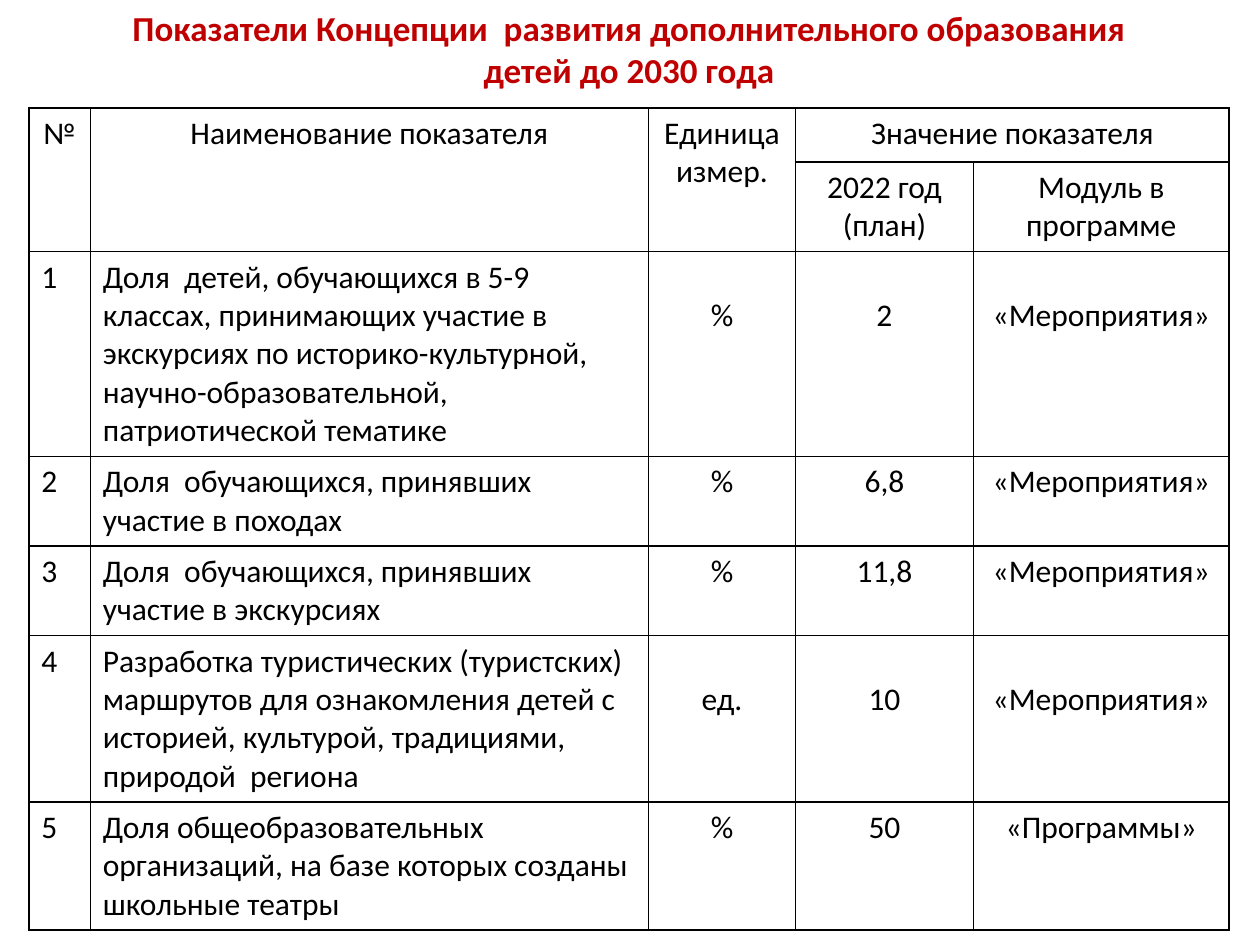
"""Build the slide with the table of education indicators."""
from typing import NamedTuple

from lxml import etree
from pptx import Presentation
from pptx import util as u
from pptx.dml import color
from pptx.enum import text
from pptx.oxml import ns

FONT = "Calibri"
BLACK, WHITE, RED = "000000", "FFFFFF", "C00000"
LEFT, WIDTH = u.Cm(0.58), u.Cm(24.2)
COLUMN_WIDTHS = (1.24, 11.25, 2.97, 3.58, 5.16)
ROW_HEIGHTS = (1.09, 1.65, 3.78, 1.65, 1.78, 3.33, 2.41)
HEADER_ROWS = 2
LOWERED_MARGIN = u.Cm(0.9)
TITLE = ("Показатели Концепции  развития дополнительного образования", "детей до 2030 года")


class Header(NamedTuple):
    row: int
    column: int
    label: str
    last_row: int
    last_column: int


class Indicator(NamedTuple):
    name: str
    unit: str
    value: str
    module: str
    lowered: bool = False


HEADERS = (
    Header(0, 0, "№", 1, 0),
    Header(0, 1, "Наименование показателя", 1, 1),
    Header(0, 2, "Единица измер.", 1, 2),
    Header(0, 3, "Значение показателя", 0, 4),
    Header(1, 3, "2022 год (план)", 1, 3),
    Header(1, 4, "Модуль в программе", 1, 4),
)

INDICATORS = (
    Indicator("Доля  детей, обучающихся в 5-9 классах, принимающих участие в экскурсиях "
              "по историко-культурной, научно-образовательной,  патриотической тематике",
              "%", "2", "«Мероприятия»", lowered=True),
    Indicator("Доля  обучающихся, принявших участие в походах", "%", "6,8", "«Мероприятия»"),
    Indicator("Доля  обучающихся, принявших участие в экскурсиях", "%", "11,8", "«Мероприятия»"),
    Indicator("Разработка туристических (туристских) маршрутов для ознакомления детей "
              "с историей, культурой, традициями, природой  региона",
              "ед.", "10", "«Мероприятия»", lowered=True),
    Indicator("Доля общеобразовательных организаций, на базе которых созданы школьные театры",
              "%", "50", "«Программы»"),
)


def rgb(value: str) -> color.RGBColor:
    return color.RGBColor.from_string(value)


def write(para, label: str, size: int, ink: str, centred: bool = True, bold: bool = False) -> None:
    para.text = label
    para.alignment = text.PP_ALIGN.CENTER if centred else text.PP_ALIGN.LEFT
    para.font.name = FONT
    para.font.size = u.Pt(size)
    para.font.bold = bold
    para.font.color.rgb = rgb(ink)


def style_cell(cell) -> None:
    properties = cell._tc.get_or_add_tcPr()
    for side in ("lnL", "lnR", "lnT", "lnB"):
        line = etree.SubElement(properties, ns.qn(f"a:{side}"), w=str(u.Pt(1)))
        fill = etree.SubElement(line, ns.qn("a:solidFill"))
        etree.SubElement(fill, ns.qn("a:srgbClr"), val=BLACK)
    cell.fill.solid()
    cell.fill.fore_color.rgb = rgb(WHITE)


def add_title(page) -> None:
    box = page.shapes.add_textbox(LEFT, u.Cm(0), WIDTH, u.Cm(1.96))
    frame = box.text_frame
    frame.word_wrap = True
    for index, label in enumerate(TITLE):
        para = frame.add_paragraph() if index else frame.paragraphs[0]
        write(para, label, 20, RED, bold=True)


def add_indicator_table(page) -> None:
    frame = page.shapes.add_table(len(ROW_HEIGHTS), len(COLUMN_WIDTHS),
                                  LEFT, u.Cm(2.18), WIDTH, u.Cm(sum(ROW_HEIGHTS)))
    table = frame.table
    table.first_row = table.horz_banding = False
    for column, width in zip(table.columns, COLUMN_WIDTHS):
        column.width = u.Cm(width)
    for row, height in zip(table.rows, ROW_HEIGHTS):
        row.height = u.Cm(height)
    for cell in table.iter_cells():
        style_cell(cell)

    for header in HEADERS:
        cell = table.cell(header.row, header.column)
        if (header.row, header.column) != (header.last_row, header.last_column):
            cell.merge(table.cell(header.last_row, header.last_column))
        write(cell.text_frame.paragraphs[0], header.label, 18, BLACK)

    for number, item in enumerate(INDICATORS, start=1):
        labels = (str(number), item.name, item.unit, item.value, item.module)
        for column, label in enumerate(labels):
            cell = table.cell(HEADER_ROWS + number - 1, column)
            centred = column >= 2
            write(cell.text_frame.paragraphs[0], label, 18, BLACK, centred)
            if item.lowered and centred:
                cell.margin_top = LOWERED_MARGIN


def main() -> None:
    deck = Presentation()
    deck.slide_width, deck.slide_height = u.Cm(25.4), u.Cm(19.05)
    page = deck.slides.add_slide(deck.slide_layouts[6])
    add_indicator_table(page)
    add_title(page)
    deck.save("out.pptx")


if __name__ == "__main__":
    main()
